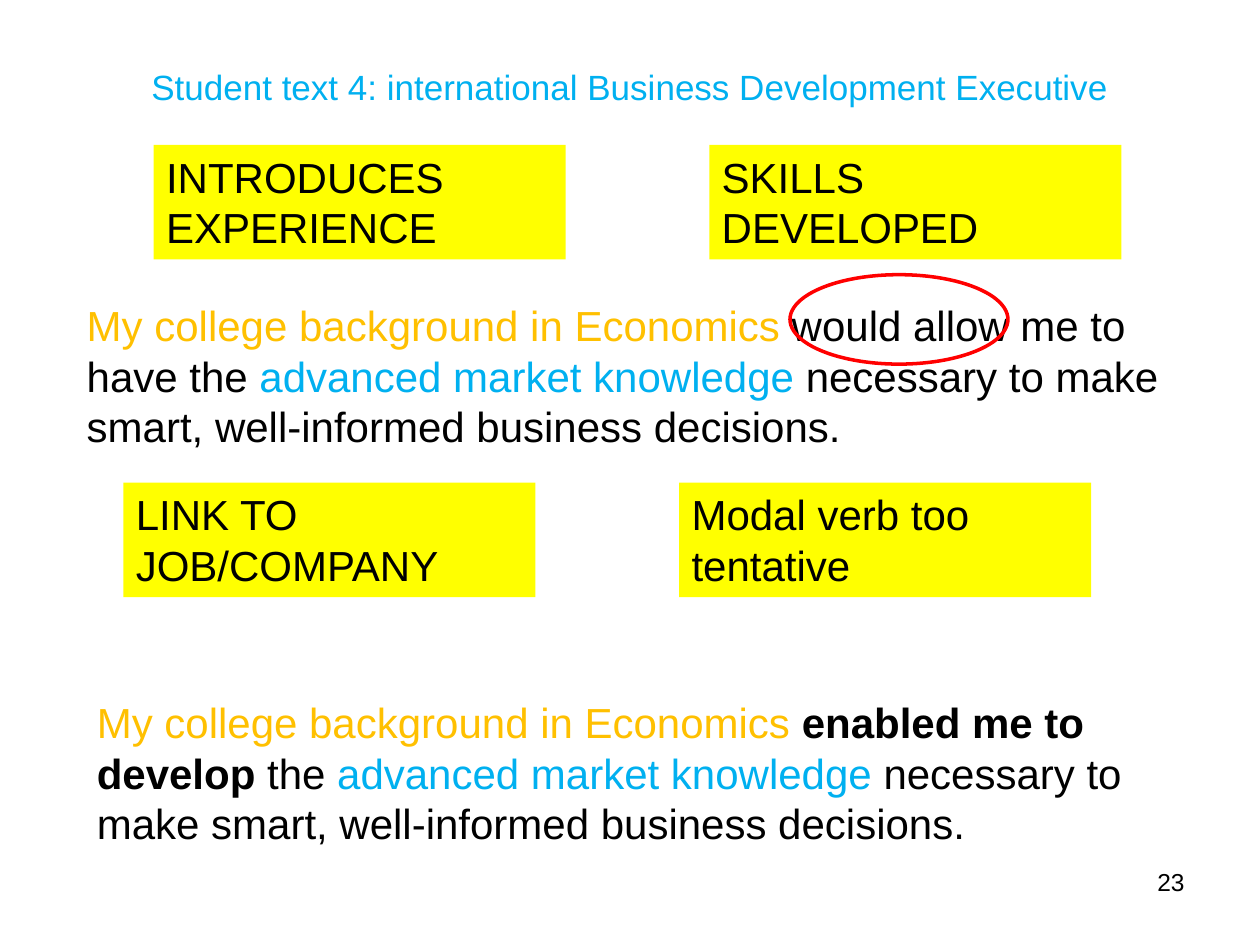
from dataclasses import dataclass

from pptx import Presentation
from pptx.dml.color import RGBColor as RGB
from pptx.enum.shapes import MSO_SHAPE as Shape
from pptx.enum.text import MSO_ANCHOR as Anchor, PP_ALIGN as Align
from pptx.util import Inches, Pt


@dataclass(frozen=True)
class Theme:
    font: str = "Arial"
    black: RGB = RGB(0x00, 0x00, 0x00)
    blue: RGB = RGB(0x00, 0xB0, 0xF0)
    gold: RGB = RGB(0xFF, 0xC0, 0x00)
    red: RGB = RGB(0xFF, 0x00, 0x00)
    yellow: RGB = RGB(0xFF, 0xFF, 0x00)
    title: int = 20
    body: int = 24
    small: int = 14


class Deck:
    def __init__(self, theme):
        self.theme = theme
        self.prs = Presentation()
        self.prs.slide_width, self.prs.slide_height = Inches(10), Inches(7.5)
        self.slide = self.prs.slides.add_slide(self.prs.slide_layouts[6])

    def text(self, box, runs, size, align=Align.LEFT, anchor=Anchor.TOP):
        """Add a text box; each run is (text, color, bold)."""
        shape = self.slide.shapes.add_textbox(*map(Inches, box))
        frame = shape.text_frame
        frame.word_wrap = True
        frame.vertical_anchor = anchor
        para = frame.paragraphs[0]
        para.alignment = align
        para.font.name, para.font.size = self.theme.font, Pt(size)
        for words, color, bold in runs:
            run = para.add_run()
            run.text = words
            run.font.color.rgb = color
            run.font.bold = bold
        return shape

    def label(self, left, top, words):
        shape = self.text((left, top, 3.27, 0.91),
                          [(words, self.theme.black, False)], self.theme.body)
        shape.fill.solid()
        shape.fill.fore_color.rgb = self.theme.yellow

    def ring(self, box):
        shape = self.slide.shapes.add_shape(Shape.OVAL, *map(Inches, box))
        shape.shadow.inherit = False
        shape.fill.background()
        shape.line.color.rgb = self.theme.red
        shape.line.width = Pt(2)

    def save(self):
        self.prs.save("out.pptx")


def main():
    theme = Theme()
    deck = Deck(theme)

    # Title
    deck.text((0.5, 0.3, 9, 0.77),
              [("Student text 4: international Business Development Executive",
                theme.blue, False)],
              theme.title, Align.CENTER, Anchor.MIDDLE)

    # Phrases shared by the student's sentence and its better version
    start = ("My college background in Economics ", theme.gold, False)
    skill = ("advanced market knowledge ", theme.blue, False)
    end = ("necessary to make smart, well-informed business decisions.",
           theme.black, False)

    # Student's sentence
    deck.text((0.59, 2.33, 9, 2.68),
              [start, ("would allow me to have the ", theme.black, False),
               skill, end], theme.body)

    # Comment labels, in two rows
    gap = 4.41
    rows = [
        (0.98 + 0.24, 1.15, ("INTRODUCES EXPERIENCE", "SKILLS DEVELOPED")),
        (0.98, 3.83, ("LINK TO JOB/COMPANY", "Modal verb too tentative")),
    ]
    for left, top, notes in rows:
        for col, note in enumerate(notes):
            deck.label(left + col * gap, top, note)

    # Slide number
    deck.text((7.17, 6.83, 2.33, 0.52), [("23", theme.black, False)],
              theme.small, Align.RIGHT)

    # Ring around the modal verb
    deck.ring((6.27, 2.18, 1.73, 0.71))

    # Better version
    deck.text((0.67, 5.48, 8.66, 1.62),
              [start, ("enabled me to develop ", theme.black, True),
               ("the ", theme.black, False), skill, end], theme.body)

    deck.save()


if __name__ == "__main__":
    main()
